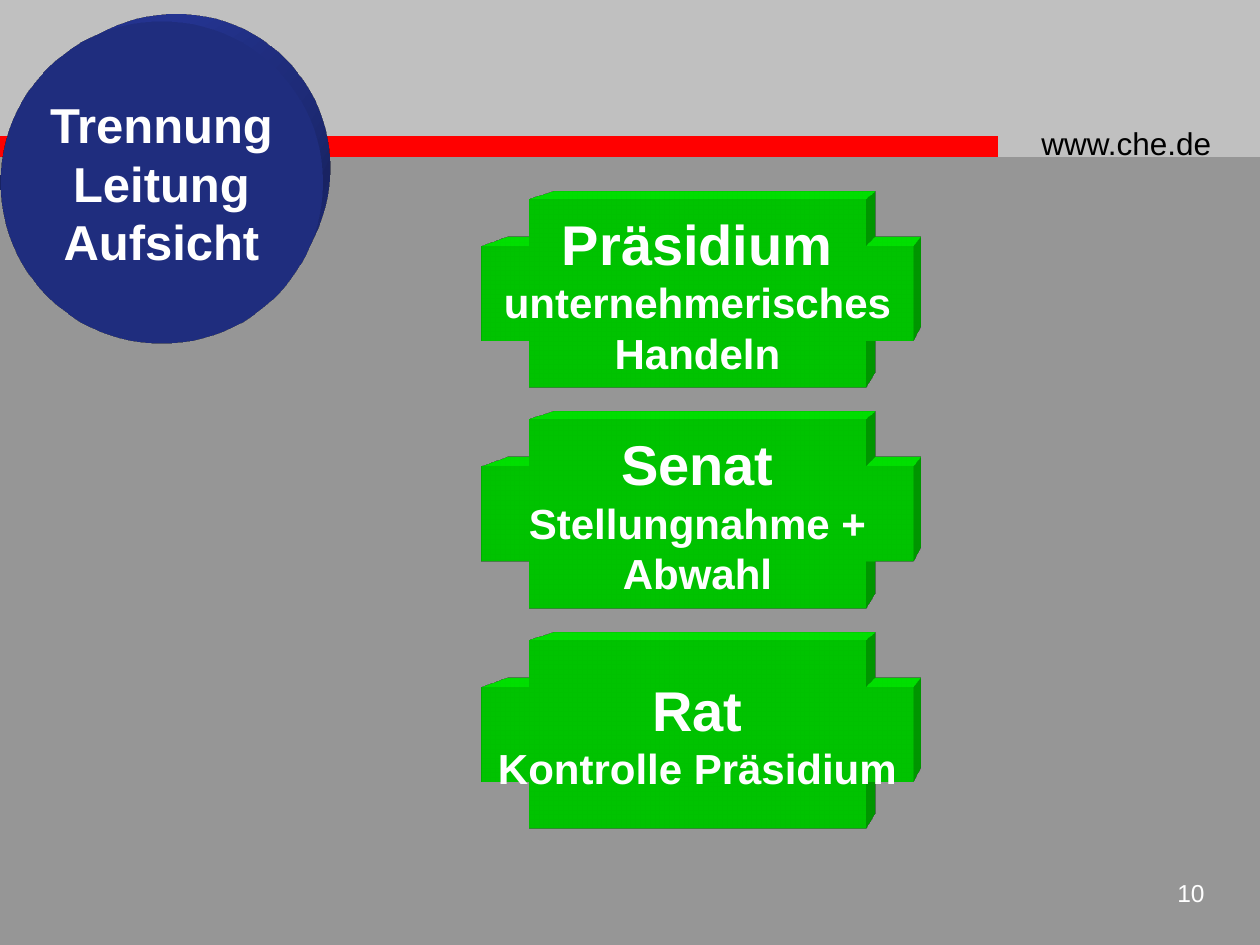
from lxml import etree
from pptx import Presentation
from pptx.dml.color import RGBColor
from pptx.enum.shapes import MSO_SHAPE
from pptx.enum.text import MSO_ANCHOR, PP_ALIGN
from pptx.oxml.ns import qn
from pptx.util import Emu, Pt

RECTANGLE, OVAL, CROSS = MSO_SHAPE.RECTANGLE, MSO_SHAPE.OVAL, MSO_SHAPE.CROSS
LEFT, CENTER, RIGHT = PP_ALIGN.LEFT, PP_ALIGN.CENTER, PP_ALIGN.RIGHT
MIDDLE = MSO_ANCHOR.MIDDLE
BLANK_LAYOUT = 6

EMU_PER_PX = 914400 / 126
COLORS = {
    "background": "969696",
    "header": "C0C0C0",
    "bar": "FF0000",
    "circle": "293BA5",
    "cross": "00FF00",
    "dark": "000000",
    "light": "FFFFFF",
}
FONT = "Arial"
EXTRUSION_DEPTH = 430200

BODIES = [
    ("Präsidium", "unternehmerisches", "Handeln"),
    ("Senat", "Stellungnahme +", "Abwahl"),
    ("Rat", "Kontrolle Präsidium"),
]


def px(value):
    return Emu(round(value * EMU_PER_PX))


def color(name):
    return RGBColor.from_string(COLORS[name])


def write_lines(frame, lines, sizes, color_name, alignment, bold=False):
    """Write one paragraph per line, each with its own size."""
    frame.word_wrap = False
    for index, (line, size) in enumerate(zip(lines, sizes)):
        paragraph = frame.paragraphs[0] if index == 0 else frame.add_paragraph()
        paragraph.alignment = alignment
        run = paragraph.add_run()
        run.text = line
        font_format = {"name": FONT, "size": Pt(size), "bold": bold}
        for attribute, value in font_format.items():
            setattr(run.font, attribute, value)
        run.font.color.rgb = color(color_name)


def add_label(slide, box, text, size, color_name, alignment=LEFT):
    label = slide.shapes.add_textbox(*map(px, box))
    write_lines(label.text_frame, [text], [size], color_name, alignment)


def add_flat_shape(slide, kind, box, fill_name):
    shape = slide.shapes.add_shape(kind, *map(px, box))
    shape.shadow.inherit = False
    shape.fill.solid()
    shape.fill.fore_color.rgb = color(fill_name)
    shape.line.fill.background()
    return shape


def extrude(shape, fill_name):
    """Give the shape a solid depth towards the top right."""
    properties = shape._element.spPr
    scene = etree.SubElement(properties, qn("a:scene3d"))
    etree.SubElement(scene, qn("a:camera"), prst="legacyPerspectiveTopRight")
    etree.SubElement(scene, qn("a:lightRig"), rig="legacyFlat3", dir="r")
    solid = etree.SubElement(properties, qn("a:sp3d"),
                             extrusionH=str(EXTRUSION_DEPTH),
                             prstMaterial="legacyMatte")
    depth_color = etree.SubElement(solid, qn("a:extrusionClr"))
    etree.SubElement(depth_color, qn("a:srgbClr"), val=COLORS[fill_name])


def add_block(slide, kind, box, fill_name, lines, sizes):
    block = add_flat_shape(slide, kind, box, fill_name)
    extrude(block, fill_name)
    block.text_frame.vertical_anchor = MIDDLE
    write_lines(block.text_frame, lines, sizes, "light", CENTER, bold=True)


def main():
    presentation = Presentation()
    presentation.slide_width, presentation.slide_height = px(1260), px(945)
    slide = presentation.slides.add_slide(presentation.slide_layouts[BLANK_LAYOUT])
    slide.background.fill.solid()
    slide.background.fill.fore_color.rgb = color("background")

    # Header band, red bar and page labels
    add_flat_shape(slide, RECTANGLE, (0, 0, 1260, 157), "header")
    add_flat_shape(slide, RECTANGLE, (-1, 136, 999, 21), "bar")
    add_label(slide, (1029, 118, 221, 50), "www.che.de", 18, "dark")
    add_label(slide, (1144, 872, 73, 53), "10", 14, "light", RIGHT)

    # Topic circle
    add_block(slide, OVAL, (0, 21, 323, 323), "circle",
              ["Trennung", "Leitung", "Aufsicht"], [28] * 3)

    # Governing bodies, stacked at an equal pitch
    top, pitch = 199, 220.5
    for row, lines in enumerate(BODIES):
        box = (482, top + row * pitch, 431, 189)
        add_block(slide, CROSS, box, "cross", lines, [32, 24, 24])

    presentation.save("out.pptx")


if __name__ == "__main__":
    main()
